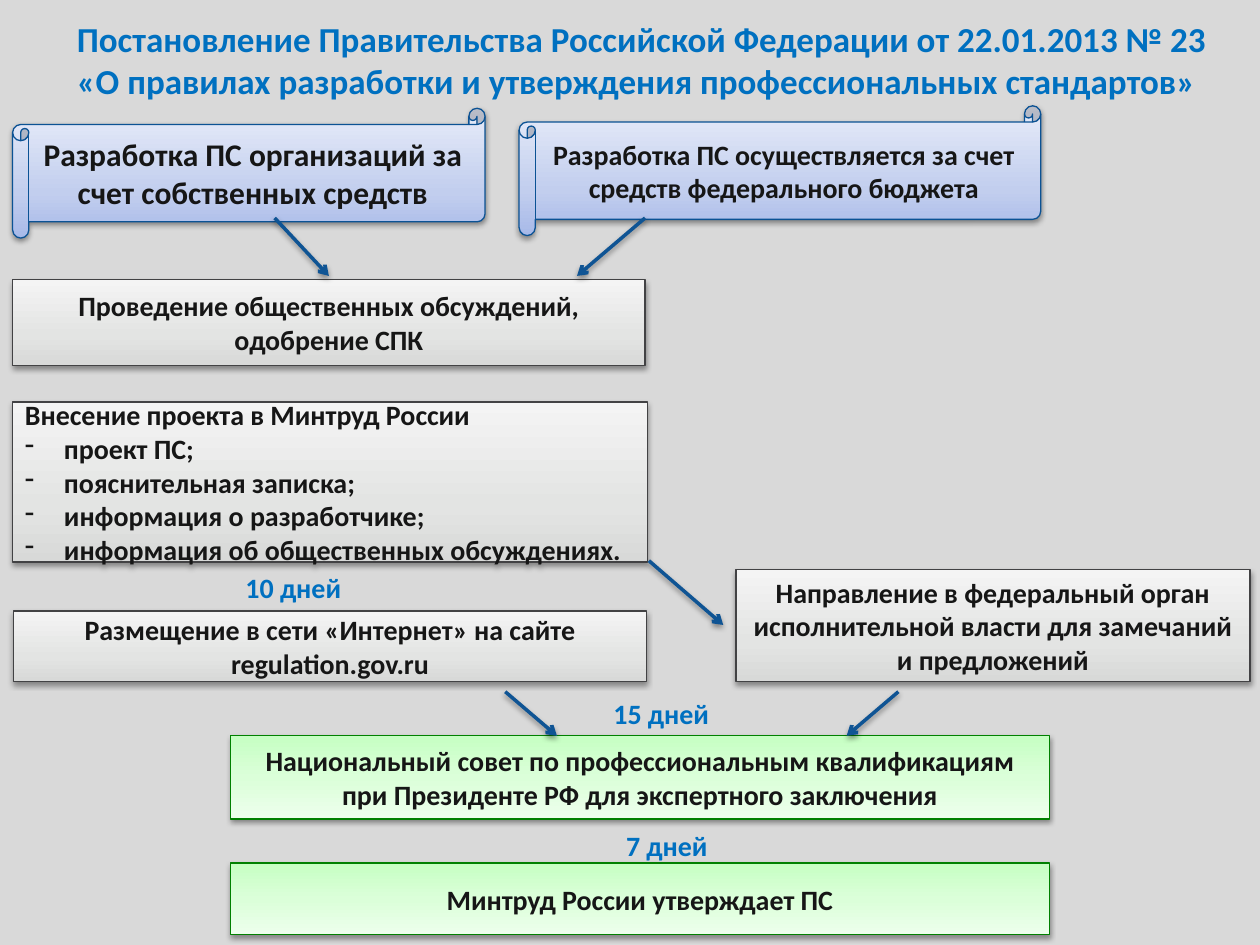
from copy import deepcopy
from dataclasses import dataclass
from typing import Any

from lxml import etree
from pptx import Presentation
from pptx import util as u
from pptx.dml.color import RGBColor
from pptx.enum import shapes, text
from pptx.oxml import ns

# Grid: 100 columns by 75 rows on a 10 x 7.5 inch slide
CELL = 0.1
COLUMNS, ROWS = 100, 75

BACKGROUND = RGBColor(0xD9, 0xD9, 0xD9)
ACCENT = RGBColor(0x00, 0x70, 0xC0)
INK = RGBColor(0x16, 0x16, 0x16)
ARROW = RGBColor(0x0F, 0x54, 0x94)

CENTER, JUSTIFY = text.PP_ALIGN.CENTER, text.PP_ALIGN.JUSTIFY
BULLET_INDENT = u.Inches(0.31)


@dataclass(frozen=True)
class Style:
    geometry: shapes.MSO_SHAPE
    line: RGBColor
    stops: tuple[tuple[float, RGBColor], ...]
    angle: int


@dataclass(frozen=True)
class Step:
    style: Style
    column: float
    row: float
    columns: float
    rows: float
    lines: tuple[str, ...]
    size: int = 16


@dataclass(frozen=True)
class Term:
    column: float
    row: float
    columns: float
    caption: str


@dataclass(frozen=True)
class Arrow:
    start: tuple[float, float]
    end: tuple[float, float]


def gradient(*stops: tuple[float, str]) -> tuple[tuple[float, RGBColor], ...]:
    return tuple((position, RGBColor.from_string(color)) for position, color in stops)


SOURCE = Style(shapes.MSO_SHAPE.HORIZONTAL_SCROLL, RGBColor(0x0B, 0x52, 0x94),
               gradient((0, "A7B9E8"), (0.35, "C2CEEE"), (1, "E7ECF9")), 90)
PROCESS = Style(shapes.MSO_SHAPE.RECTANGLE, RGBColor(0x42, 0x42, 0x44),
                gradient((0, "D8D9D8"), (0.35, "E3E4E3"), (1, "F4F4F4")), 90)
DECISION = Style(shapes.MSO_SHAPE.RECTANGLE, RGBColor(0x00, 0x80, 0x00),
                 gradient((0, "C6FFC3"), (0.5, "DBFFD9"), (1, "EDFFEC")), 270)

TITLE = ("Постановление Правительства Российской Федерации от 22.01.2013 № 23",
         "«О правилах разработки и утверждения профессиональных стандартов»")

# The first line of a step is its heading, the others are dashed items
STEPS = (
    Step(SOURCE, 1, 8.6, 37.5, 10.3,
         ("Разработка ПС организаций за счет собственных средств",), 18),
    Step(SOURCE, 41.2, 8.4, 41.4, 10.3,
         ("Разработка ПС осуществляется за счет средств федерального бюджета",)),
    Step(PROCESS, 1, 31.9, 50.4, 12.7,
         ("Внесение проекта в Минтруд России", "проект ПС;", "пояснительная записка;",
          "информация о разработчике;", "информация об общественных обсуждениях.")),
    Step(PROCESS, 1.1, 48.5, 50.2, 5.6,
         ("Размещение в сети «Интернет» на сайте regulation.gov.ru",)),
    Step(PROCESS, 58.4, 45.2, 40.8, 8.9,
         ("Направление в федеральный орган исполнительной власти "
          "для замечаний и предложений",)),
    Step(DECISION, 18.3, 58.4, 65, 6.6,
         ("Национальный совет по профессиональным квалификациям "
          "при Президенте РФ для экспертного заключения",)),
    Step(DECISION, 18.3, 68.5, 65, 5.7, ("Минтруд России утверждает ПС",)),
    Step(PROCESS, 1, 22.2, 50.2, 6.8,
         ("Проведение общественных обсуждений, одобрение СПК",)),
)
TERMS = (Term(18.5, 44.8, 9.7, "10 дней"), Term(47.7, 54.8, 9.7, "15 дней"),
         Term(48.7, 65.3, 9.1, "7 дней"))
ARROWS = (
    Arrow((21.8, 17.3), (26.1, 21.9)), Arrow((51.2, 17.3), (45.8, 21.9)),
    Arrow((40.1, 54.9), (44.2, 58.4)), Arrow((71.3, 54.9), (67.2, 58.4)),
    Arrow((51.5, 44.5), (57.4, 49.6)),
)


def cells(*counts: float) -> list[int]:
    return [u.Inches(count * CELL) for count in counts]


def apply(target: Any, **values: Any) -> None:
    for name, value in values.items():
        setattr(target, name, value)


def write(paragraph: Any, words: str, size: int, color: RGBColor) -> None:
    run = paragraph.add_run()
    run.text = words
    apply(run.font, name="Calibri", size=u.Pt(size), bold=True)
    run.font.color.rgb = color


def paragraphs(frame: Any, count: int) -> list:
    return [frame.paragraphs[0]] + [frame.add_paragraph() for _ in range(count - 1)]


def add_shadow(properties: Any) -> None:
    for effects in properties.findall(ns.qn("a:effectLst")):
        properties.remove(effects)
    effects = etree.SubElement(properties, ns.qn("a:effectLst"))
    shadow = etree.SubElement(effects, ns.qn("a:outerShdw"), blurRad="40000",
                              dist="20000", dir="5400000", rotWithShape="0")
    color = etree.SubElement(shadow, ns.qn("a:srgbClr"), val="000000")
    etree.SubElement(color, ns.qn("a:alpha"), val="38000")


def paint(shape: Any, style: Style) -> None:
    shape.fill.gradient()
    shape.fill.gradient_angle = style.angle
    stop_list = shape._element.spPr.find(".//" + ns.qn("a:gsLst"))
    stop_list.append(deepcopy(stop_list[0]))
    for stop, (position, color) in zip(shape.fill.gradient_stops, style.stops):
        stop.position = position
        stop.color.rgb = color
    shape.line.color.rgb = style.line
    shape.line.width = u.Pt(0.75)
    add_shadow(shape._element.spPr)


def add_dash(paragraph: Any) -> None:
    properties = paragraph._p.get_or_add_pPr()
    properties.set("marL", str(BULLET_INDENT))
    properties.set("indent", str(-BULLET_INDENT))
    etree.SubElement(properties, ns.qn("a:buChar"), char="-")


def add_step(slide: Any, step: Step) -> None:
    shape = slide.shapes.add_shape(
        step.style.geometry, *cells(step.column, step.row, step.columns, step.rows))
    paint(shape, step.style)
    frame = shape.text_frame
    apply(frame, word_wrap=True, vertical_anchor=text.MSO_ANCHOR.MIDDLE)
    alignment = JUSTIFY if len(step.lines) > 1 else CENTER
    for index, paragraph in enumerate(paragraphs(frame, len(step.lines))):
        paragraph.alignment = alignment
        if index:
            add_dash(paragraph)
        write(paragraph, step.lines[index], step.size, INK)


def add_term(slide: Any, term: Term) -> None:
    box = slide.shapes.add_textbox(*cells(term.column, term.row, term.columns, 3.7))
    box.text_frame.word_wrap = False
    write(box.text_frame.paragraphs[0], term.caption, 16, ACCENT)


def add_arrow(slide: Any, arrow: Arrow) -> None:
    connector = slide.shapes.add_connector(
        shapes.MSO_CONNECTOR.STRAIGHT, *cells(*arrow.start, *arrow.end))
    connector.line.color.rgb = ARROW
    connector.line.width = u.Pt(2)
    etree.SubElement(connector.line._get_or_add_ln(), ns.qn("a:tailEnd"), type="arrow")
    add_shadow(connector._element.spPr)


def set_title(slide: Any) -> None:
    title = slide.shapes.title
    left, top, width, height = cells(5.1, 0.9, 94.9, 7.7)
    apply(title, left=left, top=top, width=width, height=height)
    frame = title.text_frame
    apply(frame, word_wrap=True, vertical_anchor=text.MSO_ANCHOR.TOP,
          auto_size=text.MSO_AUTO_SIZE.NONE)
    for paragraph, words in zip(paragraphs(frame, len(TITLE)), TITLE):
        paragraph.alignment = text.PP_ALIGN.LEFT
        write(paragraph, words, 20, ACCENT)


def main() -> None:
    presentation = Presentation()
    width, height = cells(COLUMNS, ROWS)
    apply(presentation, slide_width=width, slide_height=height)
    slide = presentation.slides.add_slide(presentation.slide_layouts[5])
    slide.background.fill.solid()
    slide.background.fill.fore_color.rgb = BACKGROUND

    set_title(slide)
    for draw, items in ((add_step, STEPS), (add_arrow, ARROWS), (add_term, TERMS)):
        for item in items:
            draw(slide, item)
    presentation.save("out.pptx")


if __name__ == "__main__":
    main()
